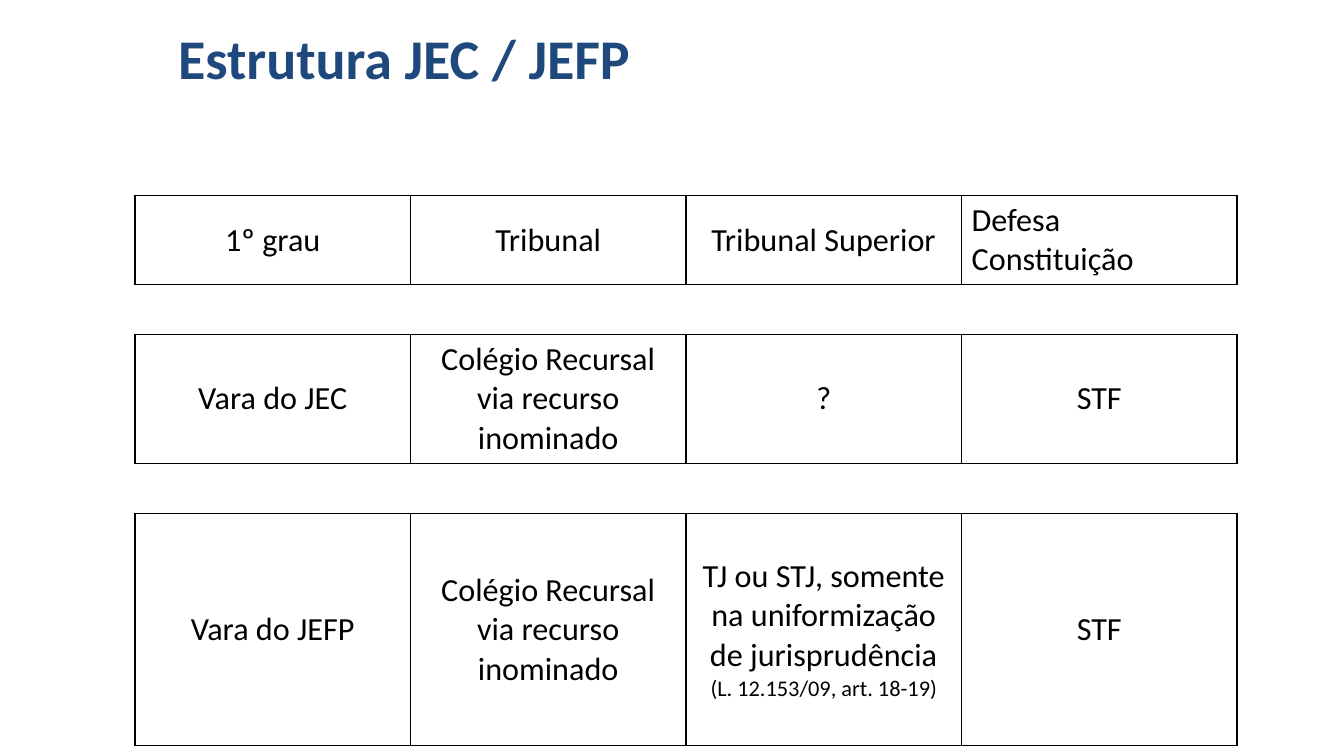
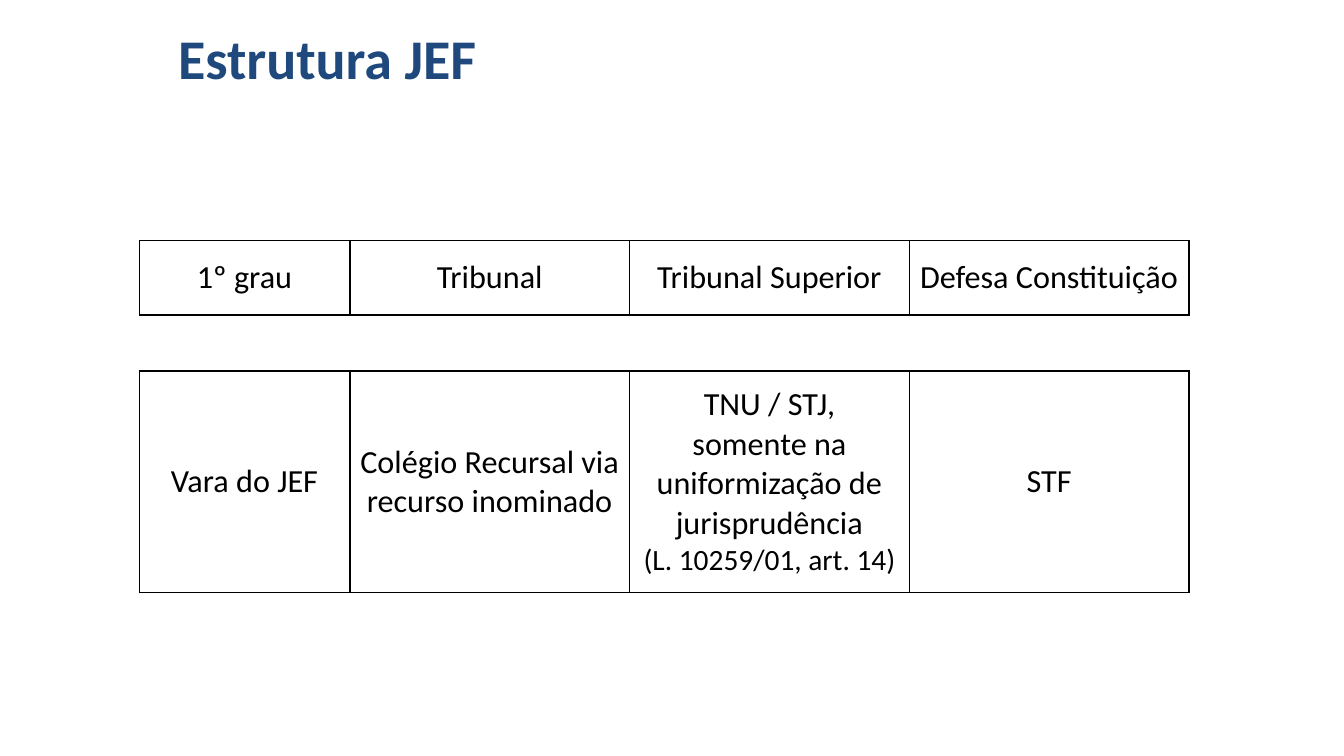
from dataclasses import dataclass

from lxml import etree
from pptx import Presentation
from pptx.dml.color import RGBColor
from pptx.enum.text import MSO_ANCHOR, MSO_AUTO_SIZE, PP_ALIGN
from pptx.oxml.ns import qn
from pptx.util import Pt

LEFT, CENTER = PP_ALIGN.LEFT, PP_ALIGN.CENTER
MIDDLE = MSO_ANCHOR.MIDDLE
NO_AUTOFIT = MSO_AUTO_SIZE.NONE
TITLE_ONLY = 5


@dataclass(frozen=True)
class Theme:
    font: str = "Calibri"
    title_color: RGBColor = RGBColor(0x1F, 0x49, 0x7D)
    text_color: RGBColor = RGBColor(0, 0, 0)
    border_color: str = "000000"
    border_width: int = 1
    title_size: int = 40
    body_size: int = 23


THEME = Theme()


def add_span(para, text, size, color, bold=False):
    span = para.add_run()
    span.text = text
    span.font.name = THEME.font
    span.font.size = Pt(size)
    span.font.bold = bold
    span.font.color.rgb = color


def set_borders(cell, visible_sides):
    properties = cell._tc.get_or_add_tcPr()
    for side in "LRTB":
        line = etree.SubElement(properties, qn(f"a:ln{side}"), w=str(Pt(THEME.border_width)))
        if side in visible_sides:
            fill = etree.SubElement(line, qn("a:solidFill"))
            etree.SubElement(fill, qn("a:srgbClr"), val=THEME.border_color)
        else:
            etree.SubElement(line, qn("a:noFill"))


# Content: a cell is a list of (text, size) paragraphs, an empty row is a spacer
BODY = THEME.body_size
HEADINGS = ["1º grau", "Tribunal", "Tribunal Superior", "Defesa Constituição"]
HEADER = [[(heading, BODY)] for heading in HEADINGS]
APPEAL = [("Colégio Recursal via recurso inominado", BODY)]
SUPREME = [("STF", BODY)]
SPACER = [[]] * len(HEADINGS)

PAGES = [
    {
        "title": "Estrutura JEC / JEFP",
        "origin": (96.5, 139.5),
        "widths": [196.8] * 4,
        "heights": [64, 35.5, 92, 36, 165.5],
        "margins": (7.2, 3.6),
        "last_heading": LEFT,
        "rows": [
            HEADER,
            SPACER,
            [[("Vara do JEC", BODY)], APPEAL, [("?", BODY)], SUPREME],
            SPACER,
            [
                [("Vara do JEFP", BODY)],
                APPEAL,
                [
                    ("TJ ou STJ, somente na uniformização de jurisprudência", BODY),
                    ("(L. 12.153/09, art. 18-19)", 16),
                ],
                SUPREME,
            ],
        ],
    },
    {
        "title": "Estrutura JEF",
        "origin": (99.5, 172),
        "widths": [150.5] + [199.8] * 3,
        "heights": [53, 40, 158.5],
        "margins": (6, 0),
        "last_heading": CENTER,
        "rows": [
            HEADER,
            SPACER,
            [
                [("Vara do JEF", BODY)],
                APPEAL,
                [
                    ("TNU / STJ,", BODY),
                    ("somente na uniformização de jurisprudência", BODY),
                    ("(L. 10259/01, art. 14)", 21),
                ],
                SUPREME,
            ],
        ],
    },
]

deck = Presentation()
deck.slide_width, deck.slide_height = Pt(960), Pt(540)

for content in PAGES:
    page = deck.slides.add_slide(deck.slide_layouts[TITLE_ONLY])

    # Title
    title = page.shapes.title
    title.left, title.top, title.width, title.height = Pt(120), Pt(16.5), Pt(792), Pt(49)
    title.text_frame.auto_size = NO_AUTOFIT
    title.text_frame.vertical_anchor = MIDDLE
    para = title.text_frame.paragraphs[0]
    para.alignment = LEFT
    add_span(para, content["title"], THEME.title_size, THEME.title_color, bold=True)

    # Table frame
    left, top = content["origin"]
    widths, heights, rows = content["widths"], content["heights"], content["rows"]
    table = page.shapes.add_table(
        len(rows), len(widths), Pt(left), Pt(top), Pt(sum(widths)), Pt(sum(heights))
    ).table
    table.first_row = table.horz_banding = False
    for column, width in zip(table.columns, widths):
        column.width = Pt(width)
    for row, height in zip(table.rows, heights):
        row.height = Pt(height)

    # Cells
    side_margin, edge_margin = content["margins"]
    for row_index, row in enumerate(rows):
        for column_index, lines in enumerate(row):
            cell = table.cell(row_index, column_index)
            set_borders(cell, "LRTB" if lines else "TB")
            cell.fill.background()
            cell.vertical_anchor = MIDDLE
            cell.margin_left = cell.margin_right = Pt(side_margin)
            cell.margin_top = cell.margin_bottom = Pt(edge_margin)
            is_last_heading = row_index == 0 and column_index == len(row) - 1
            frame = cell.text_frame
            for index, (text, size) in enumerate(lines):
                para = frame.add_paragraph() if index else frame.paragraphs[0]
                para.alignment = content["last_heading"] if is_last_heading else CENTER
                add_span(para, text, size, THEME.text_color)

deck.save("out.pptx")
